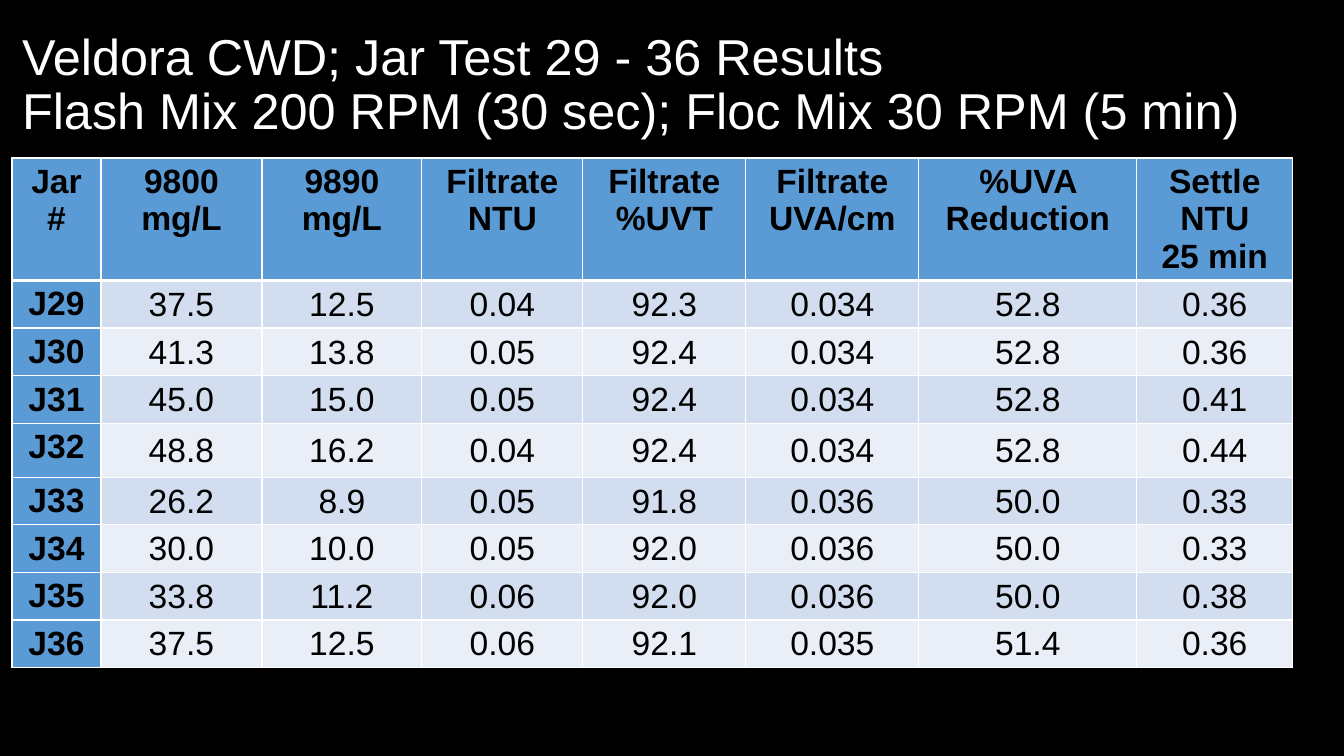
import dataclasses

import pptx
import pptx.dml.color
import pptx.enum.text
import pptx.oxml
import pptx.oxml.ns
import pptx.slide
import pptx.table
import pptx.text.text
import pptx.util

EMU_PER_INCH = 914400
PX_PER_INCH = 100.8
FONT = "Arial"
COLORS = {
    "background": "000000",
    "title": "FFFFFF",
    "text": "000000",
    "border": "FFFFFF",
    "header": "5B9BD5",
    "odd": "D2DEEF",
    "even": "EAEFF7",
}
TITLE_LINES = (
    "Veldora CWD; Jar Test 29 - 36 Results",
    "Flash Mix 200 RPM (30 sec); Floc Mix 30 RPM (5 min)",
)
HEADER_HEIGHT = 122


@dataclasses.dataclass(frozen=True)
class Column:
    header: tuple[str, ...]
    width: int


@dataclasses.dataclass(frozen=True)
class Jar:
    name: str
    results: tuple[str, ...]
    height: int = 47


COLUMNS = (
    Column(("Jar#",), 89),
    Column(("9800", "mg/L"), 161),
    Column(("9890", "mg/L"), 160),
    Column(("Filtrate", "NTU"), 161),
    Column(("Filtrate", "%UVT"), 163),
    Column(("Filtrate", "UVA/cm"), 173),
    Column(("%UVA Reduction",), 218),
    Column(("Settle", "NTU", "25 min"), 156),
)
JARS = (
    Jar("J29", ("37.5", "12.5", "0.04", "92.3", "0.034", "52.8", "0.36")),
    Jar("J30", ("41.3", "13.8", "0.05", "92.4", "0.034", "52.8", "0.36")),
    Jar("J31", ("45.0", "15.0", "0.05", "92.4", "0.034", "52.8", "0.41")),
    Jar("J32", ("48.8", "16.2", "0.04", "92.4", "0.034", "52.8", "0.44"), 54),
    Jar("J33", ("26.2", "8.9", "0.05", "91.8", "0.036", "50.0", "0.33")),
    Jar("J34", ("30.0", "10.0", "0.05", "92.0", "0.036", "50.0", "0.33")),
    Jar("J35", ("33.8", "11.2", "0.06", "92.0", "0.036", "50.0", "0.38")),
    Jar("J36", ("37.5", "12.5", "0.06", "92.1", "0.035", "51.4", "0.36")),
)


def px(length: int) -> pptx.util.Emu:
    return pptx.util.Emu(round(length * EMU_PER_INCH / PX_PER_INCH))


def rgb(name: str) -> pptx.dml.color.RGBColor:
    return pptx.dml.color.RGBColor.from_string(COLORS[name])


def add_run(
    paragraph: pptx.text.text._Paragraph, text: str, size: int, color: str, bold: bool = False
) -> None:
    run = paragraph.add_run()
    run.text = text
    run.font.name = FONT
    run.font.size = pptx.util.Pt(size)
    run.font.bold = bold
    run.font.color.rgb = rgb(color)


def add_borders(cell: pptx.table._Cell, top: int, bottom: int) -> None:
    properties = cell._tc.get_or_add_tcPr()
    for side, points in (("L", 1), ("R", 1), ("T", top), ("B", bottom)):
        properties.append(pptx.oxml.parse_xml(
            f'<a:ln{side} {pptx.oxml.ns.nsdecls("a")} w="{pptx.util.Pt(points)}">'
            f'<a:solidFill><a:srgbClr val="{COLORS["border"]}"/></a:solidFill></a:ln{side}>'
        ))


def fill_cell(
    cell: pptx.table._Cell, lines: tuple[str, ...], fill: str, top: int, bottom: int
) -> None:
    is_header = fill == "header"
    add_borders(cell, top, bottom)
    cell.fill.solid()
    cell.fill.fore_color.rgb = rgb(fill)
    if not is_header:
        cell.vertical_anchor = pptx.enum.text.MSO_ANCHOR.MIDDLE
        cell.margin_left = cell.margin_top = cell.margin_right = px(1)
        cell.margin_bottom = px(0)
    for index, line in enumerate(lines):
        frame = cell.text_frame
        paragraph = frame.add_paragraph() if index else frame.paragraphs[0]
        paragraph.alignment = pptx.enum.text.PP_ALIGN.CENTER
        add_run(paragraph, line, 24, "text", is_header)


def add_title(slide: pptx.slide.Slide) -> None:
    title = slide.shapes.title
    title.left, title.top, title.width, title.height = px(12), px(13), px(1313), px(146)
    frame = title.text_frame
    frame.word_wrap = True
    frame.auto_size = pptx.enum.text.MSO_AUTO_SIZE.NONE
    frame.vertical_anchor = pptx.enum.text.MSO_ANCHOR.MIDDLE
    paragraph = frame.paragraphs[0]
    paragraph.alignment = pptx.enum.text.PP_ALIGN.LEFT
    paragraph.line_spacing = 0.9
    for index, line in enumerate(TITLE_LINES):
        if index:
            paragraph.add_line_break()
        add_run(paragraph, line, 36, "title")


def add_results(slide: pptx.slide.Slide) -> None:
    heights = [HEADER_HEIGHT] + [jar.height for jar in JARS]
    width = sum(column.width for column in COLUMNS)
    table = slide.shapes.add_table(
        len(heights), len(COLUMNS), px(12), px(158), px(width), px(sum(heights))
    ).table
    for row, height in zip(table.rows, heights):
        row.height = px(height)
    for index, column in enumerate(COLUMNS):
        table.columns[index].width = px(column.width)
        fill_cell(table.cell(0, index), column.header, "header", 1, 3)
    for row_index, jar in enumerate(JARS, start=1):
        band = "odd" if row_index % 2 else "even"
        top = 3 if row_index == 1 else 1
        for index, text in enumerate((jar.name, *jar.results)):
            fill = band if index else "header"
            fill_cell(table.cell(row_index, index), (text,), fill, top, 1)


def main() -> None:
    presentation = pptx.Presentation()
    presentation.slide_width = px(1344)
    presentation.slide_height = px(756)
    slide = presentation.slides.add_slide(presentation.slide_layouts[5])
    slide.background.fill.solid()
    slide.background.fill.fore_color.rgb = rgb("background")
    add_title(slide)
    add_results(slide)
    presentation.save("out.pptx")


if __name__ == "__main__":
    main()
